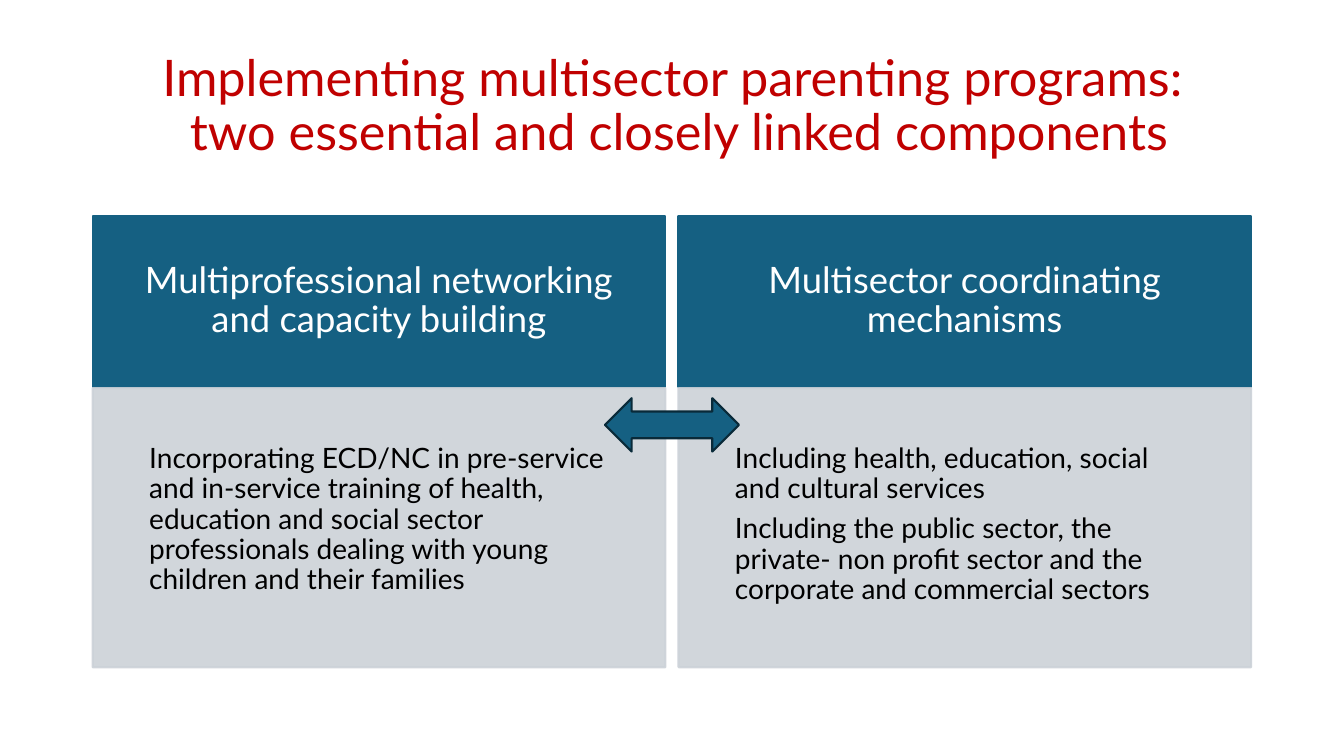
import pptx
import pptx.dml.color
import pptx.enum.shapes
import pptx.enum.text
import pptx.oxml.ns
import pptx.util
from lxml import etree

Inches = pptx.util.Inches
Pt = pptx.util.Pt
SHAPE = pptx.enum.shapes.MSO_SHAPE
ALIGN = pptx.enum.text.PP_ALIGN
ANCHOR = pptx.enum.text.MSO_ANCHOR

COLORS = {
    "title": "C00000",
    "heading": "156082",
    "detail": "CCD2D8",
    "arrow_edge": "092A39",
    "light": "FFFFFF",
    "dark": "000000",
}


class SlideBuilder:
    font_name = "Lato"
    line_width = Pt(1.5)

    def __init__(self, slide):
        self.slide = slide

    def color(self, name):
        return pptx.dml.color.RGBColor.from_string(COLORS[name])

    def paint(self, fill, name, alpha=100):
        fill.solid()
        fill.fore_color.rgb = self.color(name)
        if alpha < 100:
            for color_element in fill._xPr.iter(pptx.oxml.ns.qn("a:srgbClr")):
                etree.SubElement(color_element, pptx.oxml.ns.qn("a:alpha"), val=str(alpha * 1000))

    def set_text(self, frame, paragraphs, size, color, align, anchor, inset, space_after=0):
        frame_format = {
            "word_wrap": True,
            "auto_size": pptx.enum.text.MSO_AUTO_SIZE.NONE,
            "vertical_anchor": anchor,
            "margin_left": inset[0],
            "margin_right": inset[0],
            "margin_top": inset[1],
            "margin_bottom": inset[1],
        }
        for key, value in frame_format.items():
            setattr(frame, key, value)
        frame.text = "\n".join(paragraphs)
        paragraph_format = {
            "alignment": align,
            "line_spacing": 0.9,
            "space_before": Pt(0),
            "space_after": Pt(space_after),
        }
        for paragraph in frame.paragraphs:
            for key, value in paragraph_format.items():
                setattr(paragraph, key, value)
            for run in paragraph.runs:
                for key, value in {"name": self.font_name, "size": Pt(size)}.items():
                    setattr(run.font, key, value)
                run.font.color.rgb = self.color(color)

    def title(self, lines):
        title = self.slide.shapes.title
        place = {"left": 0.92, "top": 0.32, "width": 11.5, "height": 1.49}
        for key, value in place.items():
            setattr(title, key, Inches(value))
        self.set_text(title.text_frame, ["\v".join(lines)], 36, "title",
                      ALIGN.CENTER, ANCHOR.MIDDLE, (Inches(0.1), Inches(0.05)))

    def shape(self, kind, place, fill, line, alpha=100):
        shape = self.slide.shapes.add_shape(kind, *map(Inches, place))
        shape.shadow.inherit = False
        self.paint(shape.fill, fill, alpha)
        self.paint(shape.line.fill, line, alpha)
        shape.line.width = self.line_width
        return shape

    def component(self, left, heading, details):
        heading_box = self.shape(SHAPE.RECTANGLE, (left, 2.14, 5.68, 1.7), "heading", "heading")
        self.set_text(heading_box.text_frame, [heading], 26, "light", ALIGN.CENTER,
                      ANCHOR.MIDDLE, (Inches(0.45), Inches(0.45)), 9)
        detail_box = self.shape(SHAPE.RECTANGLE, (left, 3.85, 5.68, 2.77), "detail", "detail", 90)
        self.set_text(detail_box.text_frame, details, 20, "dark", ALIGN.LEFT,
                      ANCHOR.TOP, (Inches(0.56), Inches(0.56)), 7)

    def link_arrow(self):
        arrow = self.shape(SHAPE.UP_DOWN_ARROW, (6.4, 3.55, 0.53, 1.33), "heading", "arrow_edge")
        arrow.rotation = 270


def main():
    presentation = pptx.Presentation()
    presentation.slide_width = Inches(13.33)
    presentation.slide_height = Inches(7.5)
    builder = SlideBuilder(presentation.slides.add_slide(presentation.slide_layouts[5]))
    builder.title([
        "Implementing multisector parenting programs:",
        " two essential and closely linked components",
    ])
    components = [
        ("Multiprofessional networking and capacity building", [
            "Incorporating ECD/NC in pre-service and in-service training of health, education "
            "and social sector professionals dealing with young children and their families",
        ]),
        ("Multisector coordinating mechanisms", [
            "Including health, education, social and cultural services",
            "Including the public sector, the private- non profit sector and the corporate "
            "and commercial sectors",
        ]),
    ]
    for column, (heading, details) in enumerate(components):
        builder.component(0.92 + column * 5.81, heading, details)
    builder.link_arrow()
    presentation.save("out.pptx")


if __name__ == "__main__":
    main()
